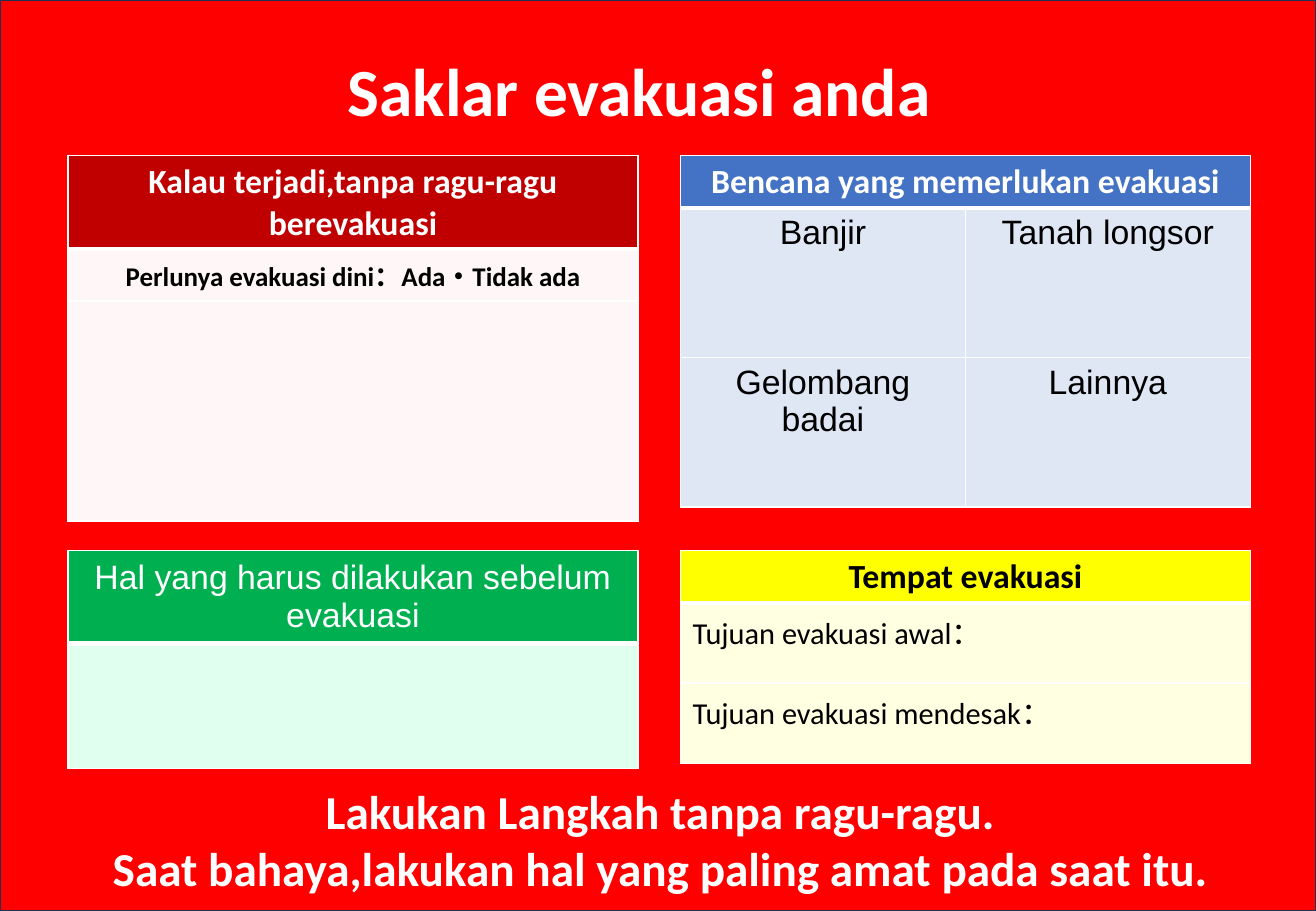
import pptx
import pptx.util
import pptx.dml.color
import pptx.enum.shapes
import pptx.enum.text
import pptx.oxml
import pptx.oxml.ns
from dataclasses import dataclass

Inches = pptx.util.Inches
Pt = pptx.util.Pt
ALIGN = pptx.enum.text.PP_ALIGN
MIDDLE = pptx.enum.text.MSO_ANCHOR.MIDDLE


@dataclass(frozen=True)
class Theme:
    white: str = "FFFFFF"
    black: str = "000000"
    back: str = "FF0000"
    edge: str = "1E3256"
    dark: str = "C00000"
    rose: str = "FFF7F7"
    blue: str = "4472C4"
    pale: str = "DFE7F5"
    green: str = "00B050"
    mint: str = "E1FFEF"
    yellow: str = "FFFF00"
    cream: str = "FFFFE1"
    bold: str = "Calibri"
    plain: str = "Arial"
    title: int = 40
    close: int = 28
    head: int = 20
    place: int = 18
    need: int = 16
    thin: int = 1
    thick: int = 3


THEME = Theme()
LEFT, RIGHT = 0.56, 5.6
UPPER, LOWER = 1.28, 4.53
WIDTH = 4.69


def rgb(code):
    return pptx.dml.color.RGBColor.from_string(code)


def style(para, size, color, face=THEME.bold, bold=True, align=ALIGN.CENTER):
    para.alignment = align
    para.font.size = Pt(size)
    para.font.name = face
    para.font.bold = bold
    para.font.color.rgb = rgb(color)


def add_back(slide, size):
    rect = slide.shapes.add_shape(
        pptx.enum.shapes.MSO_SHAPE.RECTANGLE, 0, 0, *size)
    rect.shadow.inherit = False
    rect.fill.solid()
    rect.fill.fore_color.rgb = rgb(THEME.back)
    rect.line.color.rgb = rgb(THEME.edge)
    rect.line.width = Pt(1)


def add_text(slide, box, lines, size):
    frame = slide.shapes.add_textbox(*map(Inches, box)).text_frame
    frame.word_wrap = True
    frame.vertical_anchor = MIDDLE
    frame.text = "\n".join(lines)
    for para in frame.paragraphs:
        style(para, size, THEME.white)


def add_edges(cell, row):
    """White rules, with a thick one under the header row."""
    props = cell._tc.get_or_add_tcPr()
    top = THEME.thick if row == 1 else THEME.thin
    base = THEME.thick if row == 0 else THEME.thin
    for side, width in zip("LRTB", (THEME.thin, THEME.thin, top, base)):
        props.append(pptx.oxml.parse_xml(
            f'<a:ln{side} {pptx.oxml.ns.nsdecls("a")} w="{Pt(width)}">'
            f'<a:solidFill><a:srgbClr val="{THEME.white}"/></a:solidFill>'
            f'</a:ln{side}>'))


def add_panel(slide, left, top, rows, fills, cols=1):
    """Draw a table with a header fill and a body fill."""
    table = slide.shapes.add_table(
        len(rows), cols, Inches(left), Inches(top),
        Inches(WIDTH), Inches(sum(rows))).table
    for col in table.columns:
        col.width = Inches(WIDTH / cols)
    for num, height in enumerate(rows):
        table.rows[num].height = Inches(height)
        for cell in table.rows[num].cells:
            add_edges(cell, num)
            cell.fill.solid()
            cell.fill.fore_color.rgb = rgb(fills[min(num, 1)])
    if cols > 1:
        table.cell(0, 0).merge(table.cell(0, cols - 1))
    table.cell(0, 0).vertical_anchor = MIDDLE
    return table


def put(table, row, col, text, *look, **more):
    cell = table.cell(row, col)
    cell.text = text
    style(cell.text_frame.paragraphs[0], *look, **more)


def main():
    deck = pptx.Presentation()
    deck.slide_width, deck.slide_height = Inches(10.83), Inches(7.5)
    slide = deck.slides.add_slide(deck.slide_layouts[6])

    # Background and title
    add_back(slide, (deck.slide_width, deck.slide_height))
    add_text(slide, (0, 0.38, 10.52, 0.71), ["Saklar evakuasi anda"],
             THEME.title)

    # Trigger for leaving
    cause = add_panel(slide, LEFT, UPPER, (0.77, 0.43, 1.81),
                      (THEME.dark, THEME.rose))
    put(cause, 0, 0, "Kalau terjadi,tanpa ragu-ragu berevakuasi",
        THEME.head, THEME.white)
    put(cause, 1, 0, "Perlunya evakuasi dini：Ada・Tidak ada",
        THEME.need, THEME.black)

    # Kinds of disaster
    risk = add_panel(slide, RIGHT, UPPER, (0.43, 1.23, 1.23),
                     (THEME.blue, THEME.pale), cols=2)
    put(risk, 0, 0, "Bencana yang memerlukan evakuasi",
        THEME.head, THEME.white)
    kinds = ("Banjir", "Tanah longsor", "Gelombang badai", "Lainnya")
    for num, kind in enumerate(kinds):
        put(risk, 1 + num // 2, num % 2, kind, THEME.head, THEME.black,
            face=THEME.plain, bold=False)

    # Things to do first
    tasks = add_panel(slide, LEFT, LOWER, (0.73, 1.03),
                      (THEME.green, THEME.mint))
    put(tasks, 0, 0, "Hal yang harus dilakukan sebelum evakuasi",
        THEME.head, THEME.white, face=THEME.plain, bold=False)

    # Places to go
    place = add_panel(slide, RIGHT, LOWER, (0.43, 0.66, 0.66),
                      (THEME.yellow, THEME.cream))
    put(place, 0, 0, "Tempat evakuasi", THEME.head, THEME.black)
    goals = ("Tujuan evakuasi awal：", "Tujuan evakuasi mendesak：")
    for row, goal in enumerate(goals, 1):
        put(place, row, 0, goal, THEME.place, THEME.black,
            bold=False, align=ALIGN.LEFT)

    # Closing advice
    add_text(slide, (0.17, 6.44, 10.52, 0.94),
             ["Lakukan Langkah tanpa ragu-ragu.",
              "Saat bahaya,lakukan hal yang paling amat pada saat itu."],
             THEME.close)

    deck.save("out.pptx")


if __name__ == "__main__":
    main()
